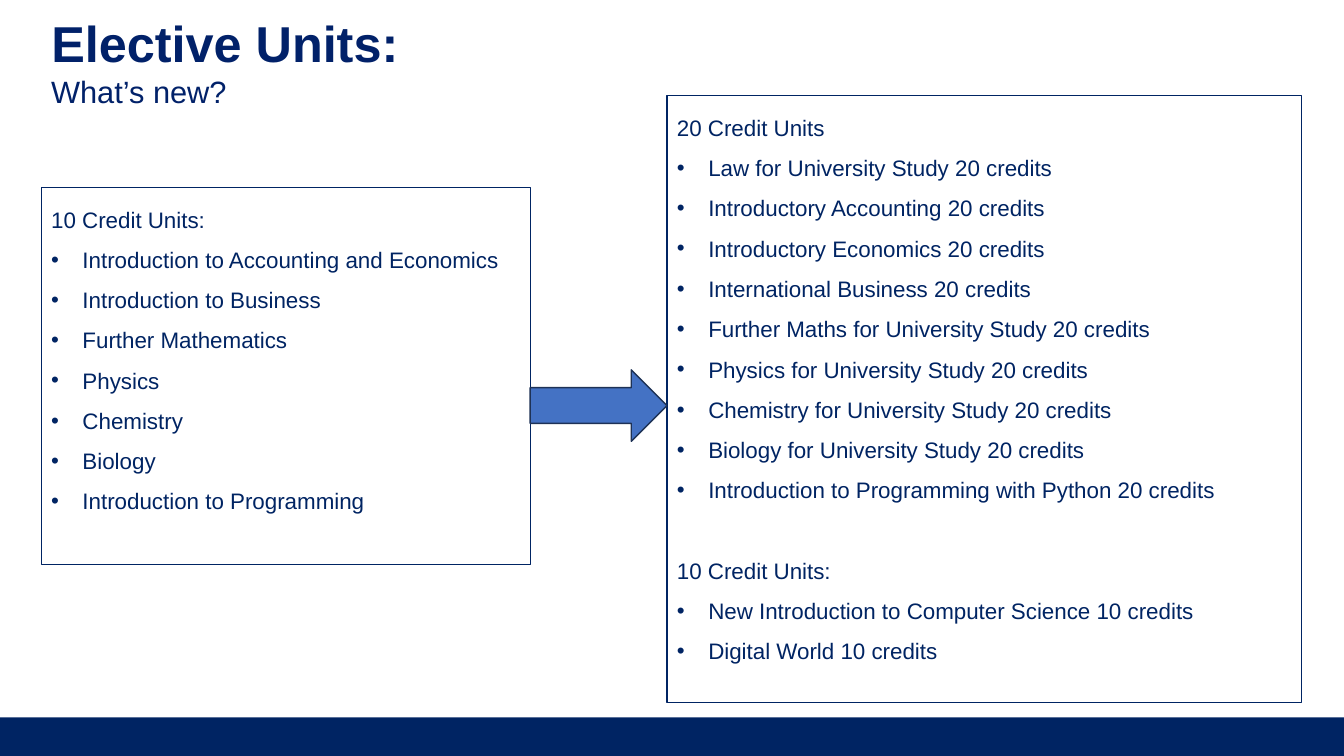
from dataclasses import dataclass

from lxml.etree import SubElement
from pptx import Presentation
from pptx.dml.color import RGBColor
from pptx.enum.shapes import MSO_SHAPE as Shape
from pptx.enum.text import MSO_ANCHOR as Anchor, MSO_AUTO_SIZE as AutoSize, PP_ALIGN as Align
from pptx.oxml.ns import qn
from pptx.util import Cm, Pt

FONT = "Arial"
NAVY = "002463"
TITLE_NAVY = "012169"
LEFT = 1.04
INDENT = 0.79


@dataclass
class Group:
    heading: str
    units: list[str]


@dataclass
class UnitBox:
    left: float
    top: float
    width: float
    height: float
    groups: list[Group]


UNIT_BOXES = [
    UnitBox(LEFT, 4.72, 12.32, 9.5, [
        Group("10 Credit Units:", [
            "Introduction to Accounting and Economics",
            "Introduction to Business",
            "Further Mathematics",
            "Physics",
            "Chemistry",
            "Biology",
            "Introduction to Programming",
        ]),
    ]),
    UnitBox(16.81, 2.41, 16, 15.29, [
        Group("20 Credit Units", [
            "Law for University Study 20 credits",
            "Introductory Accounting 20 credits",
            "Introductory Economics 20 credits",
            "International Business 20 credits",
            "Further Maths for University Study 20 credits",
            "Physics for University Study 20 credits",
            "Chemistry for University Study 20 credits",
            "Biology for University Study 20 credits",
            "Introduction to Programming with Python 20 credits",
        ]),
        Group("10 Credit Units:", [
            "New Introduction to Computer Science 10 credits",
            "Digital World 10 credits",
        ]),
    ]),
]


def rgb(color: str) -> RGBColor:
    return RGBColor.from_string(color)


def add_run(p, text: str, size: float, color: str, bold: bool = False) -> None:
    r = p.add_run()
    r.text = text
    r.font.name = FONT
    r.font.size = Pt(size)
    r.font.bold = bold
    r.font.color.rgb = rgb(color)


def add_shape(s, kind, left: float, top: float, width: float, height: float,
              fill: str = "", line: str = "", weight: float = 0.75):
    sp = s.shapes.add_shape(kind, Cm(left), Cm(top), Cm(width), Cm(height))
    sp.shadow.inherit = False
    if fill:
        sp.fill.solid()
        sp.fill.fore_color.rgb = rgb(fill)
    else:
        sp.fill.background()
    if line:
        sp.line.color.rgb = rgb(line)
        sp.line.width = Pt(weight)
    else:
        sp.line.fill.background()
    return sp


def add_bullet(p) -> None:
    pPr = p._p.get_or_add_pPr()
    pPr.set("marL", str(Cm(INDENT)))
    pPr.set("indent", str(-Cm(INDENT)))
    SubElement(pPr, qn("a:buFont")).set("typeface", FONT)
    SubElement(pPr, qn("a:buChar")).set("char", "•")


def add_unit_box(s, box: UnitBox) -> None:
    sp = add_shape(s, Shape.RECTANGLE, box.left, box.top, box.width, box.height, line=NAVY)
    tf = sp.text_frame
    tf.word_wrap = True
    tf.vertical_anchor = Anchor.TOP
    p = tf.paragraphs[0]
    for i, group in enumerate(box.groups):
        for j, text in enumerate([group.heading, *group.units]):
            if i or j:
                p = tf.add_paragraph()
            p.alignment = Align.LEFT
            p.line_spacing = 1.5
            if i and not j:
                p.space_before = Pt(28.7)
            if j:
                add_bullet(p)
            add_run(p, text, 16, NAVY)


def add_title(s) -> None:
    title = s.shapes.title
    title.left, title.top, title.width, title.height = Cm(LEFT), Cm(0.18), Cm(27.2), Cm(1.8)
    tf = title.text_frame
    tf.auto_size = AutoSize.NONE
    tf.vertical_anchor = Anchor.TOP
    p = tf.paragraphs[0]
    p.alignment = Align.LEFT
    add_run(p, "Elective Units:", 36, TITLE_NAVY, bold=True)


def add_subtitle(s) -> None:
    tf = s.shapes.add_textbox(Cm(LEFT), Cm(1.7), Cm(4.98), Cm(1.19)).text_frame
    tf.word_wrap = False
    add_run(tf.paragraphs[0], "What’s new?", 22, TITLE_NAVY)


def main() -> None:
    prs = Presentation()
    prs.slide_width, prs.slide_height = Cm(33.87), Cm(19.05)
    s = prs.slides.add_slide(prs.slide_layouts[5])

    # Heading and footer band
    add_title(s)
    add_shape(s, Shape.RECTANGLE, 0, 18.08, 33.87, 0.97, fill=NAVY)
    add_subtitle(s)

    # Old and new units
    for box in UNIT_BOXES:
        add_unit_box(s, box)

    # Arrow filling the gap between the boxes
    old, new = UNIT_BOXES
    start = old.left + old.width
    add_shape(s, Shape.RIGHT_ARROW, start, 9.32, new.left - start, 1.8,
              fill="4472C4", line="1E3256", weight=1)

    prs.save("out.pptx")


if __name__ == "__main__":
    main()
